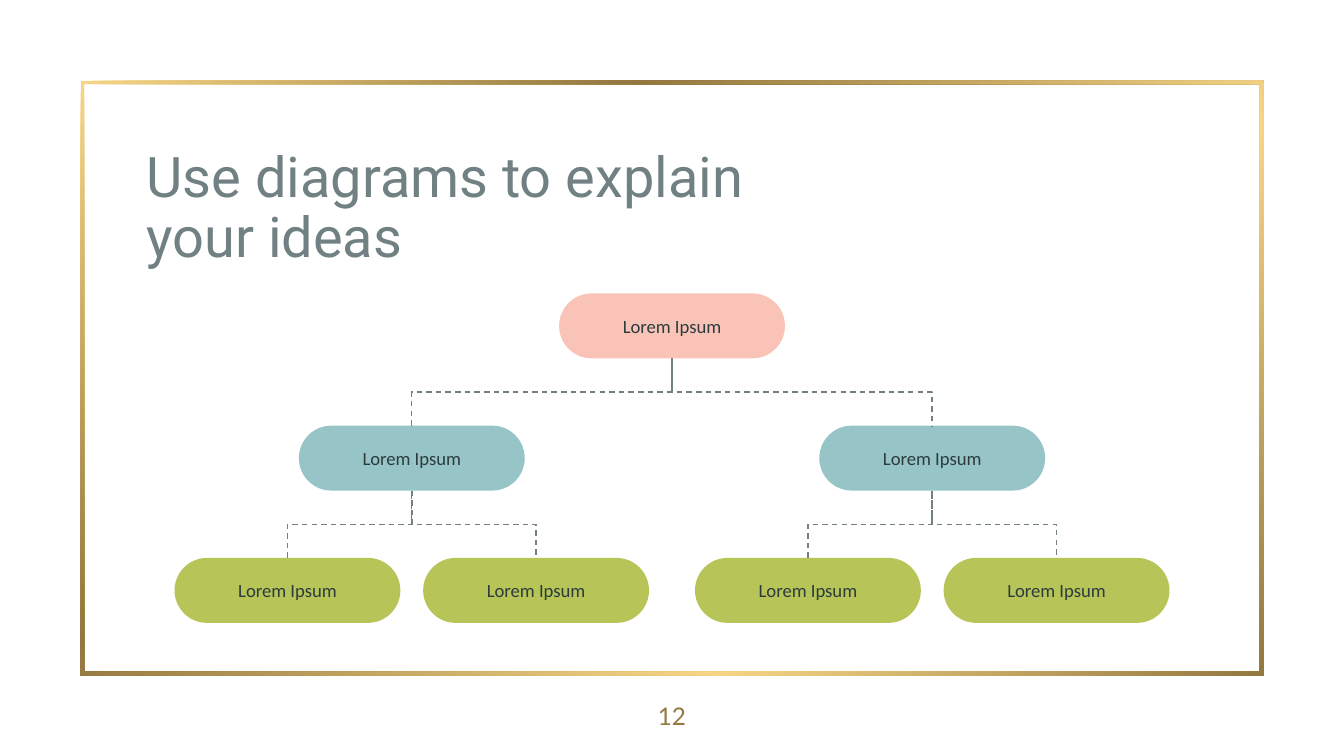
from dataclasses import dataclass

from lxml.etree import SubElement
from pptx import Presentation
from pptx.dml.color import RGBColor
from pptx.enum.dml import MSO_LINE
from pptx.enum.shapes import MSO_CONNECTOR, MSO_SHAPE
from pptx.enum.text import MSO_ANCHOR, MSO_AUTO_SIZE, PP_ALIGN
from pptx.oxml.ns import qn
from pptx.util import Pt

WIDE, HIGH = 121, 34.8
TOP, STEP = 157.2, 70.85
MID = 360
GREY, GOLD, SAND, INK = "718183", "93783F", "F6D586", "2C3C3D"
FILLS = ("FAC3B7", "97C4C7", "B7C457")
SPREADS = (139.4, 66.6)


@dataclass
class Node:
    mid: float
    level: int
    shape: object = None

    @property
    def top(self) -> float:
        return TOP + self.level * STEP


def color(code: str) -> RGBColor:
    return RGBColor.from_string(code)


def write(shape, text: str, font: str, size: float, code: str,
          align=PP_ALIGN.CENTER, anchor=MSO_ANCHOR.MIDDLE, inset: float = 0):
    frame = shape.text_frame
    frame.word_wrap = True
    frame.auto_size = MSO_AUTO_SIZE.NONE
    frame.vertical_anchor = anchor
    frame.margin_left = frame.margin_right = Pt(inset)
    frame.margin_top = frame.margin_bottom = Pt(inset)
    para = frame.paragraphs[0]
    para.text = text
    para.alignment = align
    para.font.name = font
    para.font.size = Pt(size)
    para.font.color.rgb = color(code)
    return para


def place(shape, left: float, top: float, width: float, height: float) -> None:
    shape.left, shape.top = Pt(left), Pt(top)
    shape.width, shape.height = Pt(width), Pt(height)


def add_frame(shapes) -> None:
    frame = shapes.add_shape(MSO_SHAPE.FRAME, Pt(43.2), Pt(43.2), Pt(633.6), Pt(318.6))
    frame.shadow.inherit = False
    frame.adjustments[0] = 0.006
    frame.line.fill.background()
    frame.fill.gradient()
    grad = frame._element.spPr.find(qn("a:gradFill"))
    stops = grad.find(qn("a:gsLst"))
    for old in list(stops):
        stops.remove(old)
    for spot, code in ((0, SAND), (31, GOLD), (69, SAND), (100, GOLD)):
        stop = SubElement(stops, qn("a:gs"), pos=str(spot * 1000))
        SubElement(stop, qn("a:srgbClr"), val=code)
    grad.find(qn("a:lin")).set("ang", str(45 * 60000))


def add_pill(shapes, node: Node) -> None:
    pill = shapes.add_shape(MSO_SHAPE.ROUNDED_RECTANGLE, Pt(node.mid - WIDE / 2),
                            Pt(node.top), Pt(WIDE), Pt(HIGH))
    pill.shadow.inherit = False
    pill.adjustments[0] = 0.5
    pill.fill.solid()
    pill.fill.fore_color.rgb = color(FILLS[node.level])
    pill.line.fill.background()
    write(pill, "Lorem Ipsum", "Calibri", 10, INK, inset=7.2)
    node.shape = pill


def add_link(shapes, head: Node, kid: Node) -> None:
    """Join two pills with an elbow, turned so that it leaves vertically."""
    link = shapes.add_connector(MSO_CONNECTOR.ELBOW, 0, 0, 0, 0)
    right = kid.mid > head.mid
    ends = [(head.shape, 2), (kid.shape, 0)]
    first, last = ends if right else ends[::-1]
    link.begin_connect(*first)
    link.end_connect(*last)
    link.line.color.rgb = color(GREY)
    link.line.width = Pt(0.75)
    link.line.dash_style = MSO_LINE.DASH
    props = link._element.spPr
    SubElement(props, qn("a:effectLst"))
    drop, span = STEP - HIGH, abs(kid.mid - head.mid)
    place(link, (head.mid + kid.mid - drop) / 2,
          (head.top + HIGH + kid.top - span) / 2, drop, span)
    turn = props.find(qn("a:xfrm"))
    turn.set("rot", str(270 * 60000))
    turn.set("flipH", "1" if right else "0")
    turn.set("flipV", "0")


def main() -> None:
    deck = Presentation()
    deck.slide_width, deck.slide_height = Pt(720), Pt(405)
    slide = deck.slides.add_slide(deck.slide_layouts[5])
    shapes = slide.shapes

    add_frame(shapes)
    title = shapes.title
    place(title, 78.5, 79.9, 363, 31)
    para = write(title, "Use diagrams to explain your ideas", "Roboto", 30, GREY,
                 PP_ALIGN.LEFT, MSO_ANCHOR.TOP)
    para.line_spacing = 0.9
    number = shapes.add_textbox(Pt(338.4), Pt(361.8), Pt(43.2), Pt(43.2))
    write(number, "12", "Lato", 13, GOLD)

    row = [Node(MID, 0)]
    nodes, links = list(row), []
    for level, spread in enumerate(SPREADS, 1):
        pairs = [(head, Node(head.mid + side * spread, level))
                 for head in row for side in (-1, 1)]
        row = [kid for _, kid in pairs]
        nodes += row
        links += pairs
    for node in nodes:
        add_pill(shapes, node)
    for head, kid in links:
        add_link(shapes, head, kid)
    deck.save("out.pptx")


if __name__ == "__main__":
    main()
